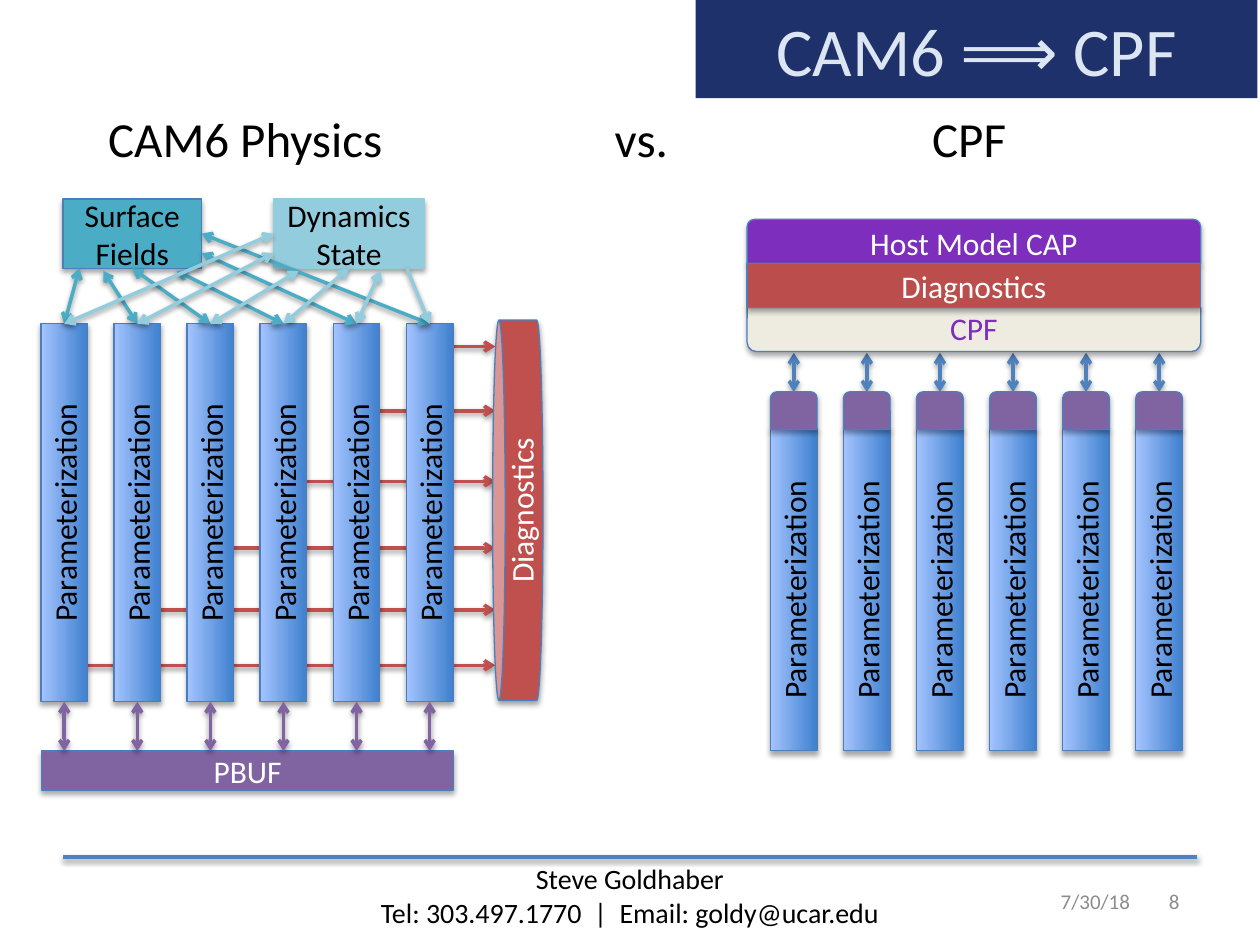
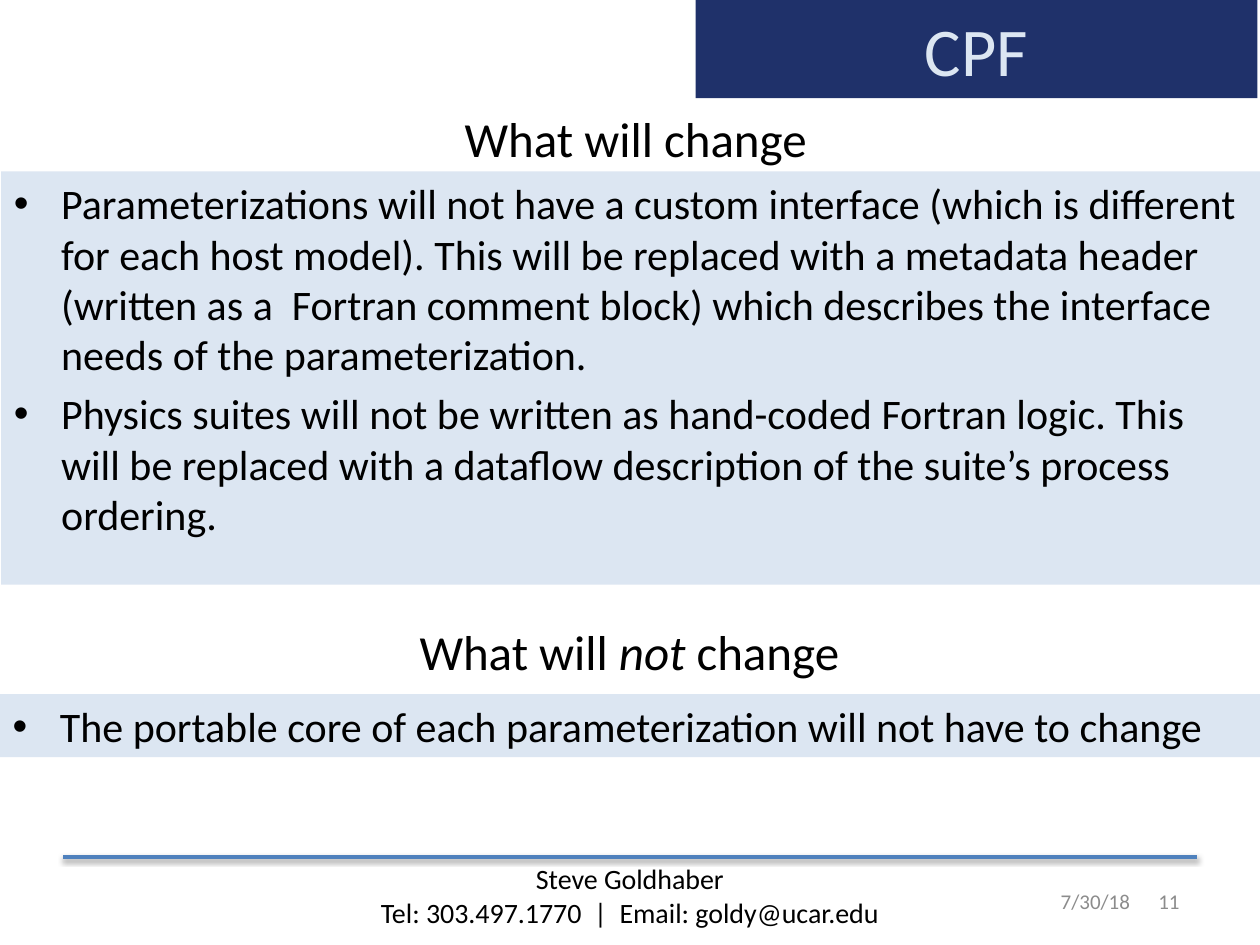
"""Build two slides comparing CAM6 physics with the CPF."""
from dataclasses import dataclass

from lxml import etree
from pptx import Presentation
from pptx.dml.color import RGBColor
from pptx.enum import shapes, text
from pptx.oxml import ns
from pptx.util import Inches, Pt

Kind = shapes.MSO_SHAPE
Align = text.PP_ALIGN
Anchor = text.MSO_ANCHOR


@dataclass(frozen=True)
class Theme:
    font: str = "Calibri"
    navy: str = "1F316A"
    pale: str = "DCE6F2"
    black: str = "000000"
    white: str = "FFFFFF"
    grey: str = "8C8C8C"
    blue: str = "4F81BD"
    edge: str = "4B7EBC"
    teal: str = "4BACC6"
    sky: str = "93CDDD"
    red: str = "C0504D"
    brick: str = "BB4E4C"
    purple: str = "8064A2"
    violet: str = "7D2EBD"
    cream: str = "EEECE1"
    column_light: str = "A4C4FF"
    column_dark: str = "3F80CE"
    title_size: float = 39
    heading_size: float = 28
    list_size: float = 24
    label_size: float = 18
    footer_size: float = 16
    small_size: float = 12
    line_width: float = 2
    edge_width: float = 0.75


def colour(value):
    return RGBColor.from_string(value)


def add_node(parent, tag, **attributes):
    node = etree.SubElement(parent, ns.qn(tag))
    for name, value in attributes.items():
        node.set(name, str(value))
    return node


def write(frame, content, size, ink="000000", font="Calibri", align=None,
          anchor=Anchor.TOP, gap=0, tabs=(), inset=None):
    """Write one paragraph per line; words between asterisks are italic."""
    frame.word_wrap = True
    frame.auto_size = text.MSO_AUTO_SIZE.NONE
    frame.vertical_anchor = anchor
    if inset is not None:
        frame.margin_left = frame.margin_right = Inches(inset)
        frame.margin_top = frame.margin_bottom = Inches(inset)
    for index, line in enumerate(content.split("\n")):
        para = frame.add_paragraph() if index else frame.paragraphs[0]
        if align is not None:
            para.alignment = align
        para.space_before = Pt(gap if index else 0)
        if tabs:
            stops = add_node(para._p.get_or_add_pPr(), "a:tabLst")
            for place in tabs:
                add_node(stops, "a:tab", pos=Inches(place), algn="l")
        for part, words in enumerate(line.split("*")):
            span = para.add_run()
            span.text = words
            span.font.name = font
            span.font.size = Pt(size)
            span.font.bold = False
            span.font.italic = part % 2 == 1
            span.font.color.rgb = colour(ink)


def place(box, left, top, width, height):
    box.left, box.top = Inches(left), Inches(top)
    box.width, box.height = Inches(width), Inches(height)


def cast_shadow(effects, opacity, distance):
    shadow = add_node(effects, "a:outerShdw", blurRad=Pt(3.1), dist=Pt(distance),
                      dir=5400000, rotWithShape=0)
    add_node(add_node(shadow, "a:srgbClr", val="000000"), "a:alpha", val=opacity * 1000)


class SlideBuilder:
    def __init__(self, deck, theme):
        self.deck = deck
        self.theme = theme
        self.page = None

    def start(self, layout, title, number):
        theme = self.theme
        self.page = self.deck.slides.add_slide(self.deck.slide_layouts[layout])
        box = self.page.shapes.title
        place(box, 5.52, 0, 4.46, 0.78)
        box.fill.solid()
        box.fill.fore_color.rgb = colour(theme.navy)
        write(box.text_frame, title, theme.title_size, theme.pale,
              align=Align.CENTER, anchor=Anchor.MIDDLE)
        self.line((0.5, 6.8), (9.5, 6.8), theme.blue)
        self.label("Steve Goldhaber\nTel: 303.497.1770  |  Email: goldy@ucar.edu",
                   (0, 6.79, 10, 0.64), theme.footer_size, align=Align.CENTER)
        for words, align in (("7/30/18", Align.LEFT), (number, Align.RIGHT)):
            self.label(words, (8.32, 6.95, 1.14, 0.4), theme.small_size,
                       ink=theme.grey, align=align, anchor=Anchor.MIDDLE)

    def label(self, words, area, size, **style):
        box = self.page.shapes.add_textbox(*map(Inches, area))
        write(box.text_frame, words, size, **style)

    def heading(self, slot, words, area):
        box = self.page.placeholders[slot]
        place(box, *area)
        write(box.text_frame, words, self.theme.heading_size, align=Align.CENTER)

    def bullets(self, slot, words, area):
        box = self.page.placeholders[slot]
        place(box, *area)
        box.fill.solid()
        box.fill.fore_color.rgb = colour(self.theme.pale)
        write(box.text_frame, words, self.theme.list_size, gap=4.8)

    def block(self, kind, area, fill, words="", ink="FFFFFF", edge=None,
              adjust=(), turn=0, inset=None):
        theme = self.theme
        box = self.page.shapes.add_shape(kind, *map(Inches, area))
        for index, value in enumerate(adjust):
            box.adjustments[index] = value
        box.rotation = turn
        box.fill.solid()
        box.fill.fore_color.rgb = colour(fill)
        box.line.color.rgb = colour(edge or theme.edge)
        box.line.width = Pt(theme.edge_width)
        box.shadow.inherit = False
        cast_shadow(box._element.spPr.find(ns.qn("a:effectLst")), 35, 1.8)
        if words:
            write(box.text_frame, words, theme.label_size, ink, align=Align.CENTER,
                  anchor=Anchor.MIDDLE, inset=inset)
        return box

    def column(self, centre, top, height):
        theme = self.theme
        box = self.block(Kind.RECTANGLE, (centre - 0.185, top, 0.37, height),
                         theme.column_light, "Parameterization", theme.black, inset=0)
        box.fill.gradient()
        box.fill.gradient_angle = 0
        for stop, shade in zip(box.fill.gradient_stops,
                               (theme.column_light, theme.column_dark)):
            stop.color.rgb = colour(shade)
        box.text_frame._txBody.bodyPr.set("vert", "vert270")
        return box

    def line(self, start, end, ink, head=False, tail=False):
        """Join two ends, each a point or a shape with a side number."""
        points = [(0, 0) if hasattr(stop[0], "shape_id") else stop for stop in (start, end)]
        link = self.page.shapes.add_connector(
            shapes.MSO_CONNECTOR.STRAIGHT, *(Inches(value) for point in points for value in point))
        for stop, connect in ((start, link.begin_connect), (end, link.end_connect)):
            if hasattr(stop[0], "shape_id"):
                connect(*stop)
        link.line.color.rgb = colour(ink)
        link.line.width = Pt(self.theme.line_width)
        stroke = link.line._get_or_add_ln()
        for shown, tag in ((head, "a:headEnd"), (tail, "a:tailEnd")):
            if shown:
                add_node(stroke, tag, type="arrow")
        cast_shadow(add_node(link._element.spPr, "a:effectLst"), 38, 1.6)


def draw_cam6(slide):
    theme = slide.theme
    centres = [0.51 + 0.58 * index for index in range(6)]
    for centre, height in zip(centres, (5.28, 4.84, 4.35, 3.82, 3.26, 2.75)):
        slide.line((centre + 0.18, height), (3.93, height), theme.red, tail=True)
    slide.block(Kind.RECTANGLE, (0.33, 5.96, 3.27, 0.31), theme.purple, "PBUF")
    slide.block(Kind.CAN, (2.6, 3.85, 3.02, 0.4), theme.red, "Diagnostics", turn=270)
    dynamics = slide.block(Kind.RECTANGLE, (2.17, 1.58, 1.2, 0.55), theme.sky,
                           "Dynamics State", theme.black, edge=theme.sky)
    surface = slide.block(Kind.RECTANGLE, (0.5, 1.58, 1.1, 0.55), theme.teal,
                          "Surface Fields", theme.black)
    columns = [slide.column(centre, 2.57, 3) for centre in centres]
    surface_starts = [(0.63, 2.13), (0.82, 2.15), (surface, 2),
                      (1.4, 2.15), (1.6, 2.01), (surface, 3)]
    dynamics_starts = [(dynamics, 1), (2.17, 2.01), (2.37, 2.15),
                       (dynamics, 2), (3.02, 2.15), (3.23, 2.13)]
    for starts, ink in ((surface_starts, theme.teal), (dynamics_starts, theme.sky)):
        for start, column in zip(starts, columns):
            slide.line(start, (column, 0), ink, head=start != (3.23, 2.13), tail=True)
    for centre, column in zip(centres, columns):
        slide.line((column, 2), (centre, 5.96), theme.purple, head=True, tail=True)


def draw_cpf(slide):
    theme = slide.theme
    for index in range(6):
        centre = 6.3 + 0.58 * index
        slide.column(centre, 3.4, 2.56)
        slide.line((centre, 3.11), (centre, 2.8), theme.blue, head=True, tail=True)
        slide.block(Kind.ROUND_2_SAME_RECTANGLE, (centre - 0.185, 3.11, 0.37, 0.3),
                    theme.purple)
    layers = (
        (0, "Host Model CAP", theme.violet, theme.white, (0.17, 0)),
        (2, "CPF", theme.cream, theme.violet, (0, 0.21)),
        (1, "Diagnostics", theme.brick, theme.white, (0, 0)),
    )
    for row, words, fill, ink, adjust in layers:
        slide.block(Kind.ROUND_2_SAME_RECTANGLE, (5.93, 1.74 + 0.35 * row, 3.6, 0.35),
                    fill, words, ink, adjust=adjust)


def main():
    deck = Presentation()
    deck.slide_width, deck.slide_height = Inches(10), Inches(7.5)
    slide = SlideBuilder(deck, Theme())

    slide.start(5, "CAM6 ⟹ CPF", "8")
    slide.label("\tCAM6 Physics\tvs.\tCPF", (0.49, 0.81, 9.11, 0.57),
                slide.theme.heading_size, tabs=(0.27, 4.29, 6.81))
    draw_cam6(slide)
    draw_cpf(slide)

    slide.start(4, "CPF", "11")
    slide.heading(1, "What will change", (0.49, 0.81, 9.11, 0.57))
    slide.bullets(2, "Parameterizations will not have a custom interface (which is different "
                  "for each host model). This will be replaced with a metadata header "
                  "(written as a  Fortran comment block) which describes the interface "
                  "needs of the parameterization.\n"
                  "Physics suites will not be written as hand-coded Fortran logic. This "
                  "will be replaced with a dataflow description of the suite’s process "
                  "ordering.", (0.01, 1.36, 10, 3.28))
    slide.heading(3, "What will *not* change", (0.44, 4.88, 9.11, 0.57))
    slide.bullets(4, "The portable core of each parameterization will not have to change",
                  (0, 5.51, 10, 0.5))
    deck.save("out.pptx")


if __name__ == "__main__":
    main()
